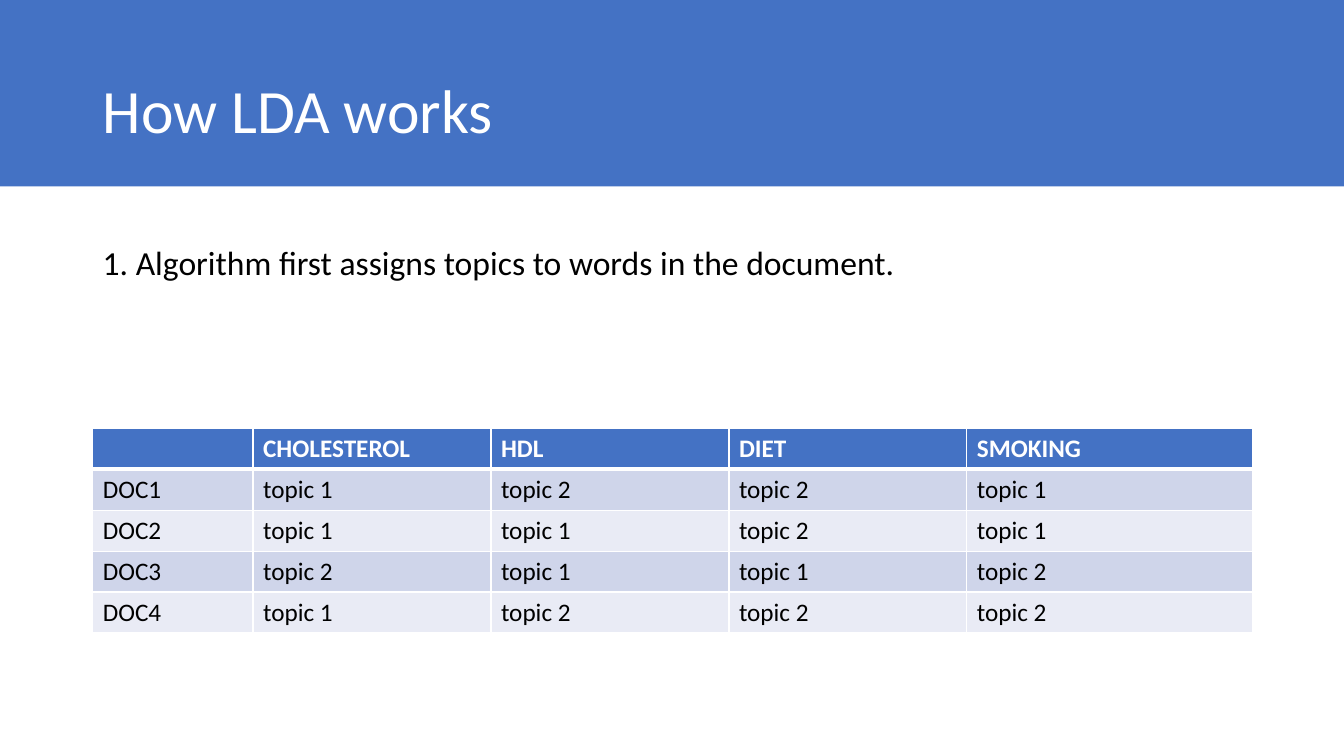
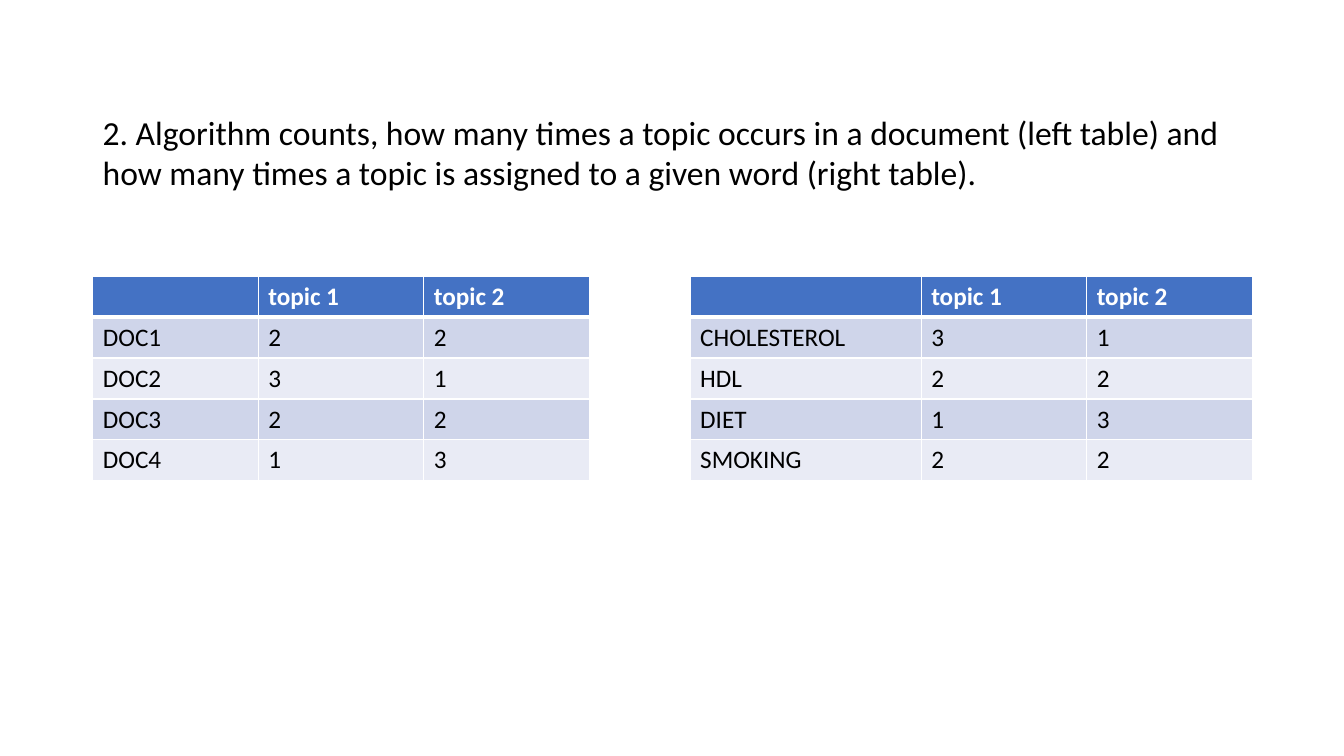
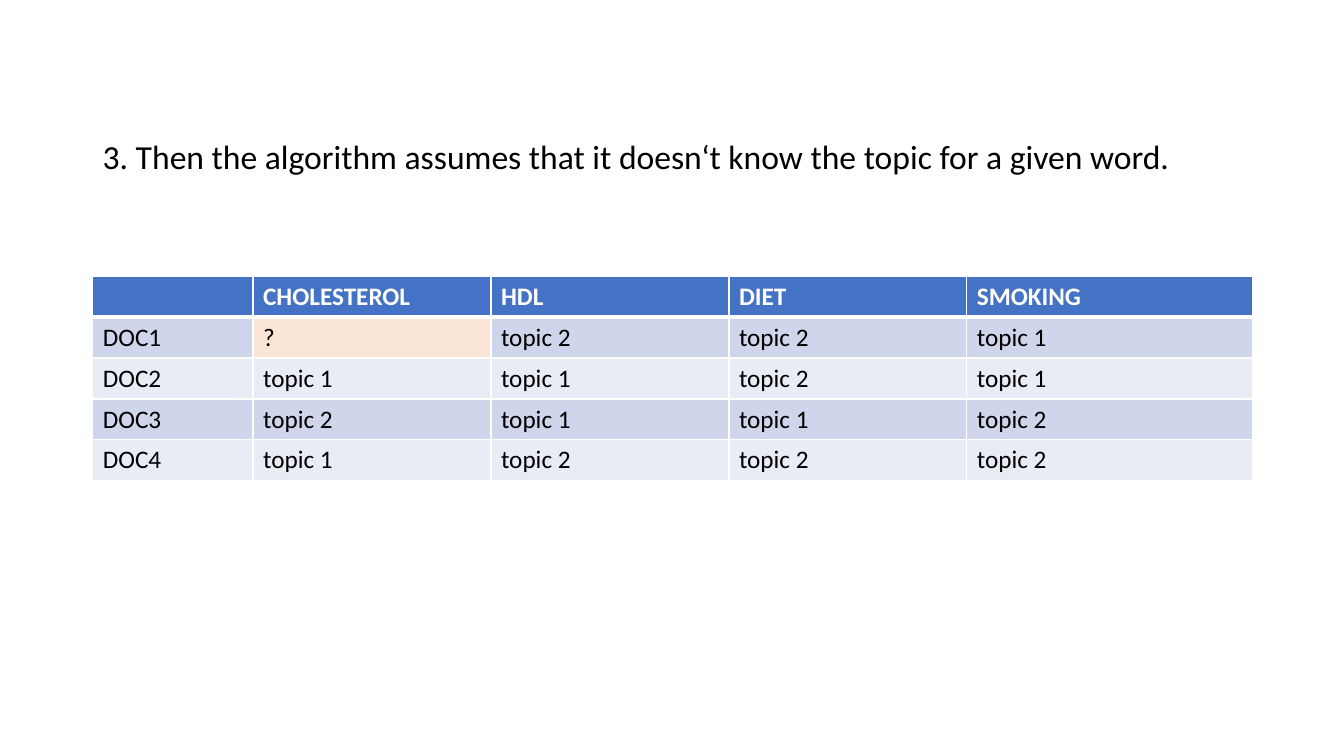
from dataclasses import dataclass

from pptx import Presentation
from pptx import util as u
from pptx.dml.color import RGBColor
from pptx.enum import shapes, text
from pptx.oxml.xmlchemy import OxmlElement


@dataclass(frozen=True)
class Theme:
    font: str = "Calibri"
    blue: str = "4472C4"
    white: str = "FFFFFF"
    black: str = "000000"
    bands: tuple = ("CFD5EA", "E9EBF5")
    unknown: str = "FBE5D6"
    title_pt: int = 44
    step_pt: int = 24
    cell_pt: int = 18
    rule_pt: int = 1
    header_rule_pt: int = 3


T = Theme()

# Grid: slide size, content column and table rows, in inches
WIDTH, HEIGHT = 13.33, 7.5
LEFT, CONTENT = 0.92, 11.5
TABLE_HEIGHT = 2.03
TABLE_TOP = 2.74

# Table content
WORDS = ["CHOLESTEROL", "HDL", "DIET", "SMOKING"]
DOCS = ["DOC1", "DOC2", "DOC3", "DOC4"]
TOPICS = ["topic 1", "topic 2"]
ASSIGNED = [[1, 2, 2, 1], [1, 1, 2, 1], [2, 1, 1, 2], [1, 2, 2, 2]]
DOC_COUNTS = [[2, 2], [3, 1], [2, 2], [1, 3]]
WORD_COUNTS = [[3, 1], [2, 2], [1, 3], [2, 2]]
WORD_COLUMNS = [1.59, 2.36, 2.36, 2.36, 2.83]
COUNT_COLUMNS = [1.64, 1.64, 1.64, 1, 2.29, 1.64, 1.64]


def rgb(color):
    return RGBColor.from_string(color)


def style(p, size, color, bold=False):
    p.font.name, p.font.size, p.font.bold = T.font, u.Pt(size), bold
    p.font.color.rgb = rgb(color)


def add_text(s, content, top, height, size, color, width=CONTENT):
    """Put one wrapped paragraph in the content column."""
    box = s.shapes.add_textbox(*map(u.Inches, (LEFT, top, width, height)))
    tf = box.text_frame
    tf.word_wrap = True
    p = tf.paragraphs[0]
    p.text = content
    style(p, size, color)
    return tf


def add_title(s, title):
    """Draw the title on a full-width band."""
    band = s.shapes.add_shape(shapes.MSO_SHAPE.RECTANGLE, 0, 0,
                              u.Inches(WIDTH), u.Inches(1.85))
    band.shadow.inherit = False
    band.fill.solid()
    band.fill.fore_color.rgb = rgb(T.blue)
    band.line.fill.background()
    tf = add_text(s, title, 0.4, 1.45, T.title_pt, T.white)
    tf.vertical_anchor = text.MSO_ANCHOR.MIDDLE
    tf.paragraphs[0].line_spacing = 0.9


def add_step(s, number, content, top, height, width=CONTENT):
    """Add a numbered step of the algorithm."""
    tf = add_text(s, " " + content, top, height, T.step_pt, T.black, width)
    num = OxmlElement("a:buAutoNum")
    num.set("type", "arabicPeriod")
    num.set("startAt", str(number))
    tf.paragraphs[0]._p.get_or_add_pPr().append(num)


def set_borders(cell, top, bottom):
    """Rule a cell in white; top and bottom are line widths in points."""
    tcPr = cell._tc.get_or_add_tcPr()
    widths = {"L": T.rule_pt, "R": T.rule_pt, "T": top, "B": bottom}
    for side, width in widths.items():
        ln = OxmlElement(f"a:ln{side}")
        ln.set("w", str(u.Pt(width)))
        fill = OxmlElement("a:solidFill")
        color = OxmlElement("a:srgbClr")
        color.set("val", T.white)
        fill.append(color)
        ln.append(fill)
        tcPr.append(ln)


def fill_cell(cell, value, row):
    """Style one cell by its row; None leaves it clear."""
    header = row == 0
    set_borders(cell, T.header_rule_pt if row == 1 else T.rule_pt,
                T.header_rule_pt if header else T.rule_pt)
    if value is None:
        cell.fill.background()
        return
    band = T.blue if header else T.bands[(row - 1) % 2]
    cell.fill.solid()
    cell.fill.fore_color.rgb = rgb(T.unknown if value == "?" else band)
    p = cell.text_frame.paragraphs[0]
    if value != "":
        p.text = str(value)
    style(p, T.cell_pt, T.white if header else T.black, header)


def add_table(s, rows, columns, top):
    """Add a banded table; columns are relative widths."""
    frame = s.shapes.add_table(
        len(rows), len(columns),
        *map(u.Inches, (LEFT, top, CONTENT, TABLE_HEIGHT)))
    table = frame.table
    for column, share in zip(table.columns, columns):
        column.width = u.Inches(CONTENT * share / sum(columns))
    for i, row in enumerate(rows):
        for j, value in enumerate(row):
            fill_cell(table.cell(i, j), value, i)


def labelled(heads, names, values):
    """Join column heads, row names and values into table rows."""
    return [["", *heads]] + [[n, *v] for n, v in zip(names, values)]


def main():
    prs = Presentation()
    prs.slide_width, prs.slide_height = u.Inches(WIDTH), u.Inches(HEIGHT)
    first, second, third = (prs.slides.add_slide(prs.slide_layouts[6])
                            for _ in range(3))
    topics = [[TOPICS[n - 1] for n in row] for row in ASSIGNED]
    assigned = labelled(WORDS, DOCS, topics)

    # Step 1: topics assigned to words
    add_title(first, "How LDA works")
    add_step(first, 1, "Algorithm first assigns topics to words in the "
             "document.", 2.35, 0.5, CONTENT * 0.71)
    add_table(first, assigned, WORD_COLUMNS, 4.25)

    # Step 2: counts by document and by word, side by side
    by_doc = labelled(TOPICS, DOCS, DOC_COUNTS)
    by_word = labelled(TOPICS, WORDS, WORD_COUNTS)
    counts = [[*d, None, *w] for d, w in zip(by_doc, by_word)]
    add_table(second, counts, COUNT_COLUMNS, TABLE_TOP)
    add_step(second, 2, "Algorithm counts, how many times a topic occurs in "
             "a document (left table) and how many times a topic is assigned "
             "to a given word (right table).", 1.06, 1.21)

    # Step 3: one topic treated as unknown
    add_step(third, 3, "Then the algorithm assumes that it doesn‘t know the "
             "topic for a given word.", 1.3, 0.81)
    assigned[1][1] = "?"
    add_table(third, assigned, WORD_COLUMNS, TABLE_TOP)

    prs.save("out.pptx")


if __name__ == "__main__":
    main()
